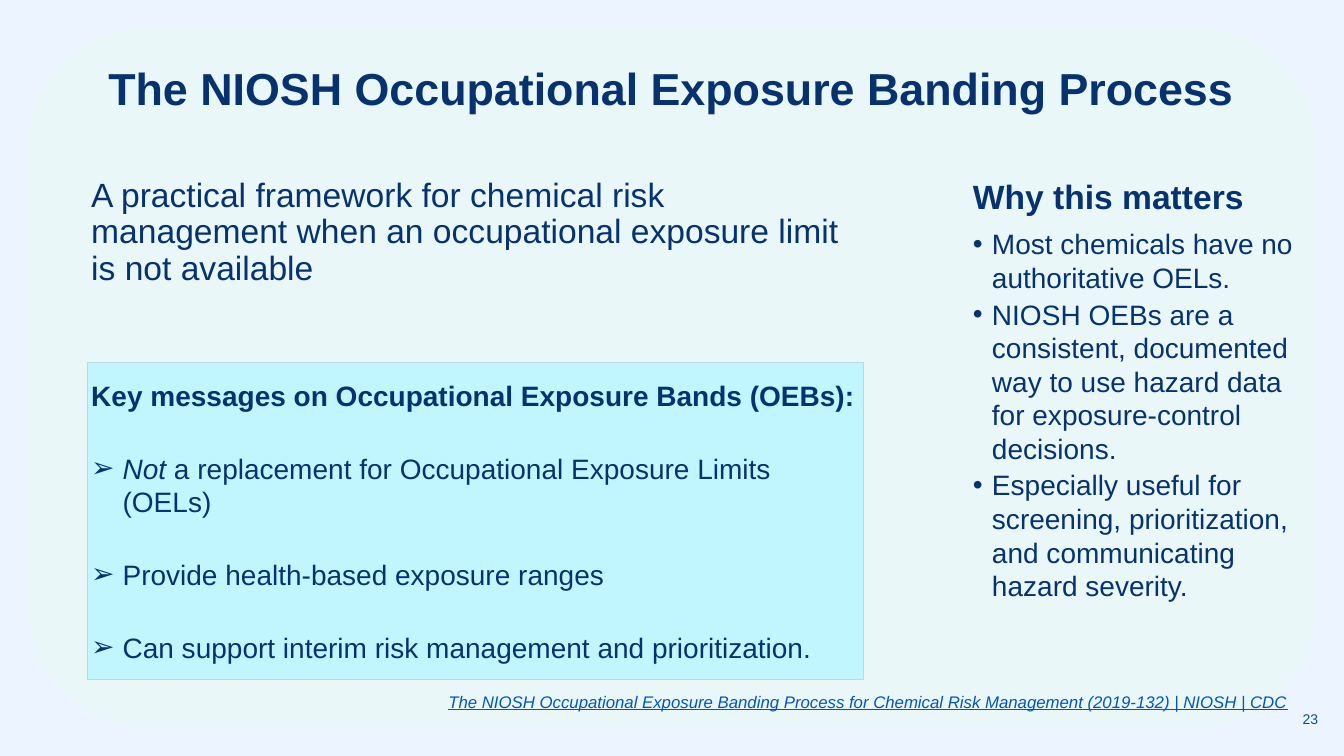
from dataclasses import dataclass
from typing import NamedTuple

from lxml.etree import SubElement
from pptx import Presentation
from pptx.dml.color import RGBColor as RGB
from pptx.enum.shapes import MSO_SHAPE as SHAPE
from pptx.enum.text import MSO_ANCHOR as ANCHOR, MSO_AUTO_SIZE as AUTO, PP_ALIGN as ALIGN
from pptx.oxml.ns import qn
from pptx.util import Cm, Pt


@dataclass(frozen=True)
class Theme:
    """Colours, font and type sizes of the slide."""
    font: str = "Arial"
    back: RGB = RGB.from_string("ECF5FF")
    panel: RGB = RGB.from_string("EAF7F8")
    card: RGB = RGB.from_string("C2F6FF")
    border: RGB = RGB.from_string("B8D8E8")
    text: RGB = RGB.from_string("06336F")
    link: RGB = RGB.from_string("0056BD")
    number: RGB = RGB.from_string("00538A")
    title: int = 32
    lead: int = 24
    body: int = 20
    source: int = 12
    page: int = 10


class Box(NamedTuple):
    """A rectangle in centimetres."""
    x: float
    y: float
    w: float
    h: float

    def emu(self):
        """Return the rectangle as lengths."""
        return [Cm(v) for v in self]


THEME = Theme()


def set_frame(tf, anchor=ANCHOR.TOP):
    """Wrap a text frame and give it narrow insets."""
    tf.auto_size = AUTO.NONE
    tf.word_wrap = True
    tf.vertical_anchor = anchor
    tf.margin_left = tf.margin_right = Cm(0.1)
    tf.margin_top = tf.margin_bottom = Cm(0.05)


def style(p, size, color=THEME.text, bold=False, align=ALIGN.LEFT):
    """Format a paragraph and all its runs."""
    p.alignment = align
    p.space_after = Pt(2)
    for r in p.runs:
        r.font.name = THEME.font
        r.font.size = Pt(size)
        r.font.bold = bold
        r.font.color.rgb = color


def add_bullet(p, char, indent):
    """Give a paragraph a hanging bullet."""
    pPr = p._p.get_or_add_pPr()
    pPr.set("marL", str(Cm(indent)))
    pPr.set("indent", str(-Cm(indent)))
    SubElement(pPr, qn("a:buFont"), typeface=THEME.font)
    SubElement(pPr, qn("a:buChar"), char=char)


def add_text(slide, box, text, size, color=THEME.text, bold=False, anchor=ANCHOR.TOP):
    """Add a one-paragraph text box and return its paragraph."""
    tf = slide.shapes.add_textbox(*box.emu()).text_frame
    set_frame(tf, anchor)
    p = tf.paragraphs[0]
    p.text = text
    style(p, size, color, bold)
    return p


def add_block(slide, box, shape, fill):
    """Add a flat filled shape without outline."""
    sp = slide.shapes.add_shape(shape, *box.emu())
    sp.shadow.inherit = False
    sp.fill.solid()
    sp.fill.fore_color.rgb = fill
    sp.line.fill.background()
    return sp


def add_title(slide, box, text):
    """Place and format the title placeholder."""
    title = slide.shapes.title
    title.left, title.top, title.width, title.height = box.emu()
    tf = title.text_frame
    tf.text = text
    set_frame(tf, ANCHOR.MIDDLE)
    style(tf.paragraphs[0], THEME.title, bold=True, align=ALIGN.CENTER)


def add_panel(slide, box):
    """Add the rounded panel behind the title."""
    sp = add_block(slide, box, SHAPE.ROUNDED_RECTANGLE, THEME.panel)
    slide.shapes.title.element.addprevious(sp.element)


def add_reasons(slide, box, heading, reasons):
    """Add a heading with a bulleted list below it."""
    add_text(slide, box._replace(h=1.7), heading, THEME.lead, bold=True, anchor=ANCHOR.MIDDLE)
    body = box._replace(y=box.y + 1.57, h=box.h - 1.57)
    tf = slide.shapes.add_textbox(*body.emu()).text_frame
    set_frame(tf)
    for i, reason in enumerate(reasons):
        p = tf.add_paragraph() if i else tf.paragraphs[0]
        p.text = reason
        add_bullet(p, "•", 0.48)
        style(p, THEME.body)


def add_key_messages(slide, box, heading, messages):
    """Add the card of key messages, each with an optional italic lead word."""
    sp = add_block(slide, box, SHAPE.RECTANGLE, THEME.card)
    sp.line.color.rgb = THEME.border
    sp.line.width = Pt(0.75)
    tf = sp.text_frame
    set_frame(tf, ANCHOR.MIDDLE)
    tf.text = heading
    style(tf.paragraphs[0], THEME.body, bold=True)
    for stress, message in messages:
        p = tf.add_paragraph()
        if stress:
            r = p.add_run()
            r.text = stress
            r.font.italic = True
        p.add_run().text = message
        add_bullet(p, "➢", 0.79)
        p.space_before = Pt(26)
        style(p, THEME.body)


def add_footer(slide, box, source, page):
    """Add the source link text and the page number."""
    p = add_text(slide, box._replace(w=21.84, h=0.76), source, THEME.source, THEME.link)
    p.runs[0].font.italic = p.runs[0].font.underline = True
    corner = Box(box.x + box.w - 1, box.y + box.h - 0.43, 1, 0.43)
    tf = slide.shapes.add_textbox(*corner.emu()).text_frame
    set_frame(tf)
    tf.margin_left = tf.margin_right = tf.margin_top = tf.margin_bottom = 0
    tf.text = page
    style(tf.paragraphs[0], THEME.page, THEME.number, align=ALIGN.RIGHT)


def main():
    """Build and save the slide."""
    prs = Presentation()
    prs.slide_width, prs.slide_height = Cm(33.87), Cm(19.05)
    slide = prs.slides.add_slide(prs.slide_layouts[5])
    slide.background.fill.solid()
    slide.background.fill.fore_color.rgb = THEME.back

    add_panel(slide, Box(0.71, 0.71, 32.44, 17.58))
    add_title(slide, Box(2.46, 1.07, 28.93, 2.26),
              "The NIOSH Occupational Exposure Banding Process")
    lead = add_text(slide, Box(2.2, 4.45, 19.28, 2.84),
                    "A practical framework for chemical risk management when an "
                    "occupational exposure limit is not available", THEME.lead)
    lead.line_spacing = 0.9
    add_reasons(slide, Box(24.42, 4.1, 8.41, 12.39), "Why this matters", [
        "Most chemicals have no authoritative OELs.",
        "NIOSH OEBs are a consistent, documented way to use hazard data "
        "for exposure-control decisions.",
        "Especially useful for screening, prioritization, and communicating hazard severity.",
    ])
    add_key_messages(slide, Box(2.2, 9.14, 19.56, 7.98),
                     "Key messages on Occupational Exposure Bands (OEBs):", [
        ("Not", " a replacement for Occupational Exposure Limits (OELs)"),
        ("", "Provide health-based exposure ranges"),
        ("", "Can support interim risk management and prioritization."),
    ])
    add_footer(slide, Box(11.2, 17.37, 22.02, 0.97),
               "The NIOSH Occupational Exposure Banding Process for Chemical Risk "
               "Management (2019-132) | NIOSH | CDC", "23")
    prs.save("out.pptx")


if __name__ == "__main__":
    main()
